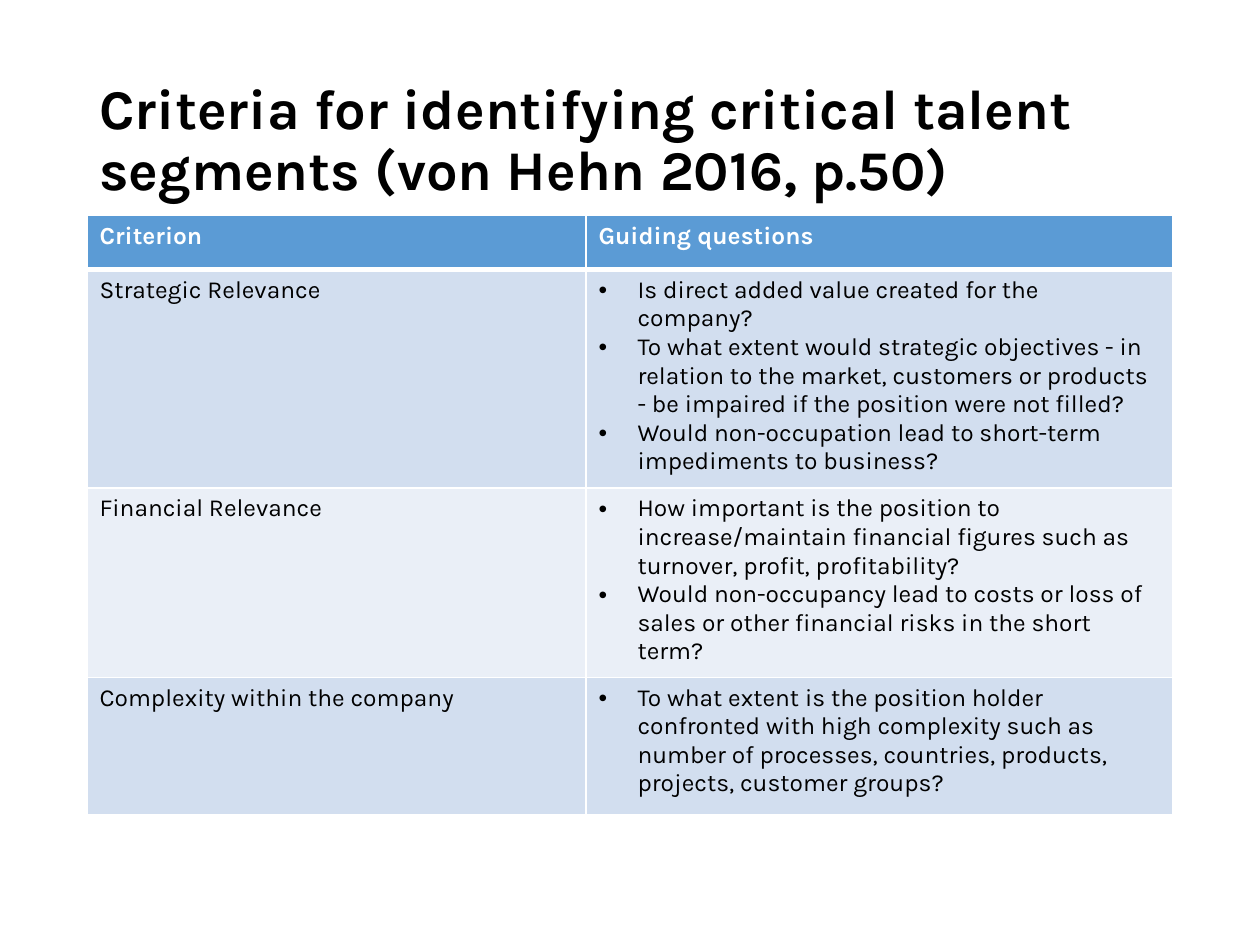
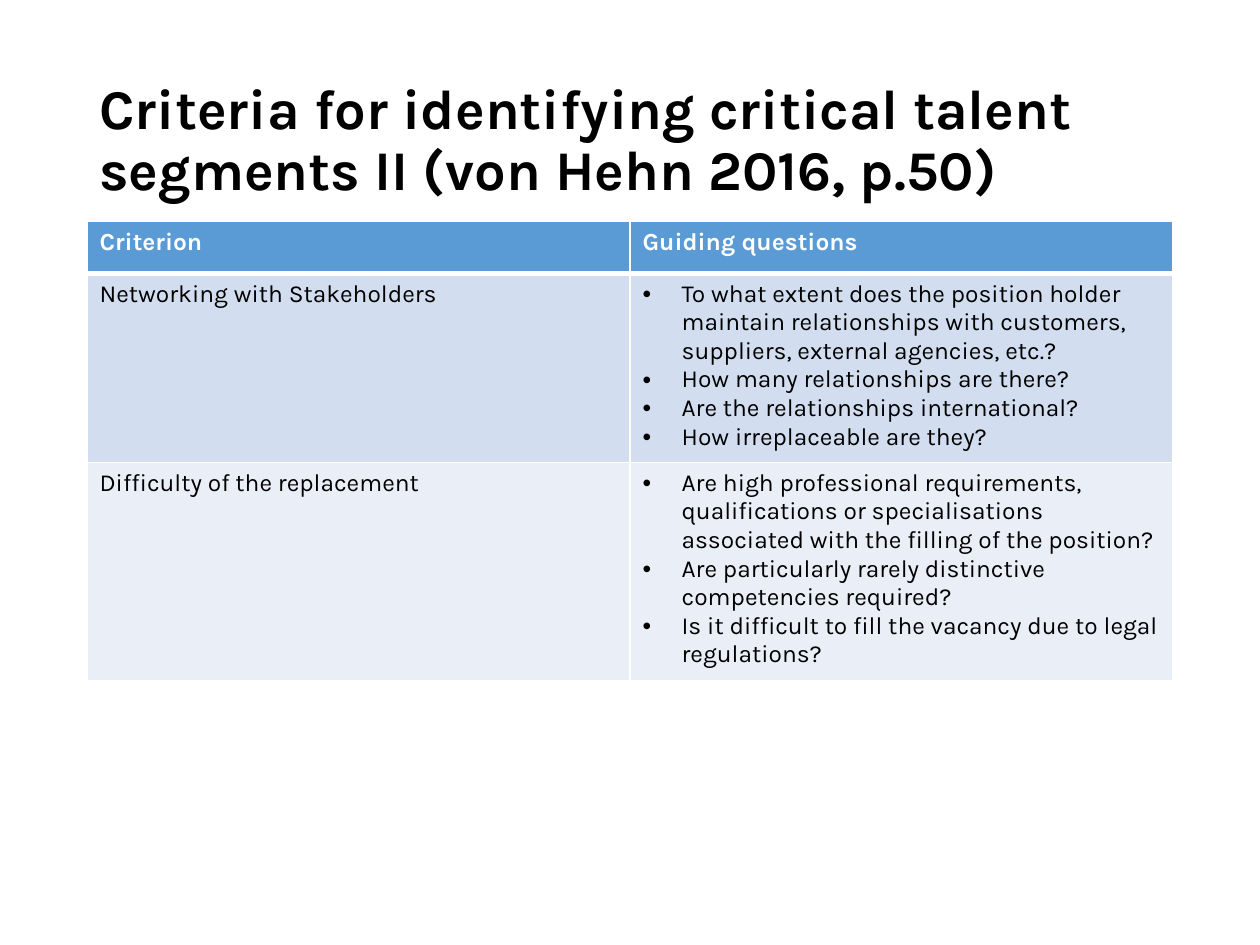
from lxml.etree import SubElement
from pptx import Presentation
from pptx.dml.color import RGBColor
from pptx.enum.text import MSO_ANCHOR
from pptx.oxml.ns import qn
from pptx.util import Inches, Pt

FONT = "Karla"
BLACK, WHITE, HEADER = "000000", "FFFFFF", "5B9BD5"
BANDS = ["D2DEEF", "EAEFF7"]
LEFT, WIDTH = 0.69, 8.62
HEADINGS = ("Criterion", ["Guiding questions"])

SLIDES = [
    {
        "title": "Criteria for identifying critical talent segments (von Hehn 2016, p.50)",
        "top": 1.71,
        "cols": [3.96, 4.66],
        "heights": [0.43, 1.58, 1.33, 1.09],
        "criteria": [
            ("Strategic Relevance", [
                "Is direct added value created for the company?",
                "To what extent would strategic objectives - in relation to the market, "
                "customers or products - be impaired if the position were not filled?",
                "Would non-occupation lead to short-term impediments to business?",
            ]),
            ("Financial Relevance", [
                "How important is the position to increase/maintain financial figures "
                "such as turnover, profit, profitability?",
                "Would non-occupancy lead to costs or loss of sales or other financial "
                "risks in the short term?",
            ]),
            ("Complexity within the company", [
                "To what extent is the position holder confronted with high complexity "
                "such as number of processes, countries, products, projects, customer groups?",
            ]),
        ],
    },
    {
        "title": "Criteria for identifying critical talent segments II (von Hehn 2016, p.50)",
        "top": 1.76,
        "cols": [4.31, 4.31],
        "heights": [0.41, 1.46, 1.68],
        "criteria": [
            ("Networking with Stakeholders", [
                "To what extent does the position holder maintain relationships with "
                "customers, suppliers, external agencies, etc.?",
                "How many relationships are there?",
                "Are the relationships international?",
                "How irreplaceable are they?",
            ]),
            ("Difficulty of the replacement", [
                "Are high professional requirements, qualifications or specialisations "
                "associated with the filling of the position?",
                "Are particularly rarely distinctive competencies required?",
                "Is it difficult to fill the vacancy due to legal regulations?",
            ]),
        ],
    },
]


def rgb(value):
    return RGBColor.from_string(value)


def style_run(r, size, color, bold):
    r.font.name = FONT
    r.font.size = Pt(size)
    r.font.bold = bold
    r.font.color.rgb = rgb(color)


prs = Presentation()
prs.slide_width, prs.slide_height = Inches(10), Inches(7.5)

for page in SLIDES:
    s = prs.slides.add_slide(prs.slide_layouts[6])
    title = s.shapes.add_textbox(Inches(LEFT), Inches(0.4), Inches(WIDTH), Inches(1.45))
    tf = title.text_frame
    tf.word_wrap = True
    tf.vertical_anchor = MSO_ANCHOR.MIDDLE
    tf.text = page["title"]
    p = tf.paragraphs[0]
    p.line_spacing = 0.9
    style_run(p.runs[0], 32, BLACK, True)

    rows = [HEADINGS] + page["criteria"]
    table = s.shapes.add_table(
        len(rows), 2, Inches(LEFT), Inches(page["top"]),
        Inches(WIDTH), Inches(sum(page["heights"])),
    ).table
    for column, width in zip(table.columns, page["cols"]):
        column.width = Inches(width)

    for i, (criterion, questions) in enumerate(rows):
        table.rows[i].height = Inches(page["heights"][i])
        is_header = i == 0
        for j, lines in enumerate([[criterion], questions]):
            cell = table.cell(i, j)
            tcPr = cell._tc.get_or_add_tcPr()
            borders = {"lnL": 1, "lnR": 1, "lnT": 3 if i == 1 else 1, "lnB": 3 if is_header else 1}
            for side, weight in borders.items():
                ln = SubElement(tcPr, qn(f"a:{side}"), w=str(Pt(weight)))
                SubElement(SubElement(ln, qn("a:solidFill")), qn("a:srgbClr"), val=WHITE)
            cell.fill.solid()
            cell.fill.fore_color.rgb = rgb(HEADER if is_header else BANDS[(i - 1) % 2])

            cell.text_frame.text = "\n".join(lines)
            for p in cell.text_frame.paragraphs:
                if j == 1 and not is_header:
                    pPr = p._p.get_or_add_pPr()
                    pPr.set("marL", str(Inches(0.31)))
                    pPr.set("indent", str(-Inches(0.31)))
                    SubElement(pPr, qn("a:buFont"), typeface="Arial")
                    SubElement(pPr, qn("a:buChar"), char="•")
                style_run(p.runs[0], 14, WHITE if is_header else BLACK, is_header)

prs.save("out.pptx")
